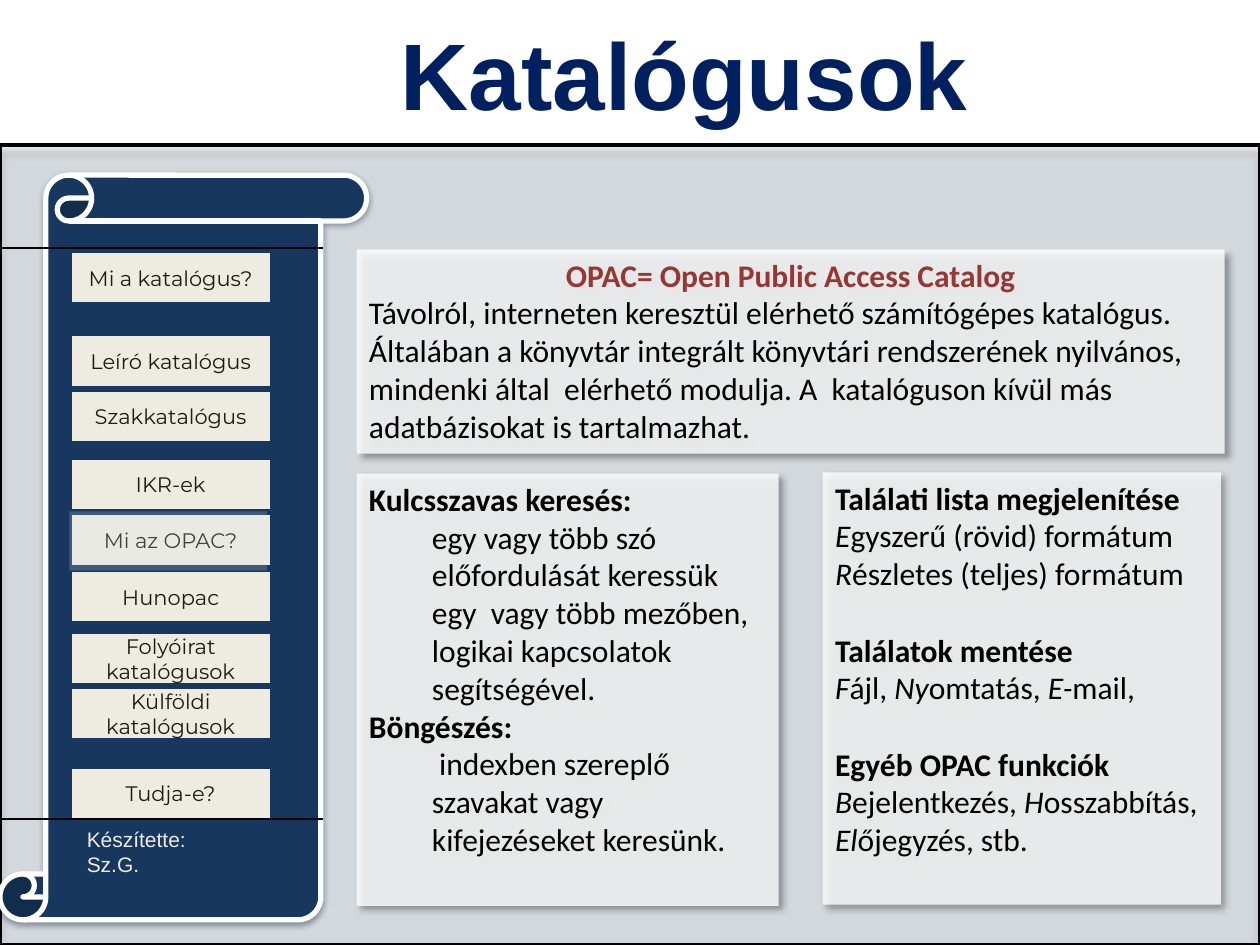
from dataclasses import dataclass

import pptx
import pptx.dml.color
import pptx.enum.shapes
import pptx.enum.text
import pptx.oxml.ns
import pptx.util
from lxml import etree

Inches = pptx.util.Inches
Pt = pptx.util.Pt
Shapes = pptx.enum.shapes.MSO_SHAPE
Align = pptx.enum.text.PP_ALIGN
Anchor = pptx.enum.text.MSO_ANCHOR
qn = pptx.oxml.ns.qn

COLORS = {
    "black": "000000",
    "white": "FFFFFF",
    "mist": "DCE6F2",
    "title": "002060",
    "scroll": "17375E",
    "scroll_shadow": "0F243E",
    "cream": "EEECE1",
    "button_text": "1E1C11",
    "heading": "953735",
}


@dataclass(frozen=True)
class Box:
    left: float
    top: float
    width: float
    height: float

    def lengths(self) -> tuple:
        return tuple(Inches(v) for v in (self.left, self.top, self.width, self.height))


@dataclass(frozen=True)
class Shadow:
    color: str
    alpha: int
    blur: float
    distance: float
    angle: int


@dataclass(frozen=True)
class Line:
    runs: tuple
    color: str = "black"
    align: Align = Align.LEFT
    indented: bool = False
    before: float = 0


@dataclass(frozen=True)
class Card:
    box: Box
    lines: tuple


@dataclass(frozen=True)
class Button:
    label: str
    top: float


CARD_SHADOW = Shadow("black", 40, 4, 3, 45)
GAP = 22

BUTTONS = (
    Button("Mi a katalógus?", 2.01),
    Button("Leíró katalógus", 2.67),
    Button("Szakkatalógus", 3.11),
    Button("IKR-ek", 3.65),
    Button("Mi az OPAC?", 4.09),
    Button("Hunopac", 4.54),
    Button("Folyóirat katalógusok", 5.03),
    Button("Külföldi katalógusok", 5.47),
    Button("Tudja-e?", 6.1),
)

CARDS = (
    Card(Box(2.83, 1.98, 6.89, 1.62), (
        Line((("OPAC= Open Public Access Catalog", "b"),), "heading", Align.CENTER),
        Line((("Távolról, interneten keresztül elérhető számítógépes katalógus. "
               "Általában a könyvtár integrált könyvtári rendszerének nyilvános, "
               "mindenki által  elérhető modulja. A  katalóguson kívül más "
               "adatbázisokat is tartalmazhat.", ""),)),
    )),
    Card(Box(2.83, 3.76, 3.35, 3.43), (
        Line((("Kulcsszavas keresés:", "b"),)),
        Line((("egy vagy több szó előfordulását keressük egy  vagy több mezőben, "
               "logikai kapcsolatok segítségével.", ""),), indented=True),
        Line((("Böngészés:", "b"),)),
        Line(((" indexben szereplő szavakat vagy kifejezéseket keresünk.", ""),),
             indented=True),
    )),
    Card(Box(6.53, 3.75, 3.16, 3.43), (
        Line((("Találati lista megjelenítése", "b"),)),
        Line((("E", "i"), ("gyszerű (rövid) formátum", ""))),
        Line((("R", "i"), ("észletes (teljes) formátum", ""))),
        Line((("Találatok mentése", "b"),), before=GAP),
        Line((("F", "i"), ("ájl, ", ""), ("Ny", "i"), ("omtatás, ", ""),
              ("E-", "i"), ("mail,", ""))),
        Line((("Egyéb OPAC funkciók", "b"),), before=GAP),
        Line((("B", "i"), ("ejelentkezés, ", ""), ("H", "i"), ("osszabbítás, ", ""),
              ("El", "i"), ("őjegyzés, stb.", ""))),
    )),
)


def rgb(color: str) -> pptx.dml.color.RGBColor:
    return pptx.dml.color.RGBColor.from_string(COLORS[color])


def add_alpha(color_element, percent: int) -> None:
    etree.SubElement(color_element, qn("a:alpha"), val=str(percent * 1000))


def style_font(font, family: str, size: float, color: str, bold: bool = False) -> None:
    font.name = family
    font.size = Pt(size)
    font.bold = bold
    font.color.rgb = rgb(color)


def add_figure(slide, kind: Shapes, box: Box, fill: str, opacity: int = 100,
               outline: str = "", outline_width: float = 0, shadow: Shadow | None = None):
    figure = slide.shapes.add_shape(kind, *box.lengths())
    figure.fill.solid()
    figure.fill.fore_color.rgb = rgb(fill)
    properties = figure.element.spPr
    if opacity < 100:
        add_alpha(properties.find(f"{qn('a:solidFill')}/{qn('a:srgbClr')}"), opacity)
    if outline:
        figure.line.color.rgb = rgb(outline)
        figure.line.width = Pt(outline_width)
    else:
        figure.line.fill.background()
    figure.shadow.inherit = False
    if shadow:
        outer = etree.SubElement(
            properties.find(qn("a:effectLst")), qn("a:outerShdw"),
            blurRad=str(Pt(shadow.blur)), dist=str(Pt(shadow.distance)),
            dir=str(shadow.angle * 60000), algn="tl", rotWithShape="0")
        add_alpha(etree.SubElement(outer, qn("a:srgbClr"), val=COLORS[shadow.color]),
                  shadow.alpha)
    return figure


def add_caption(slide, box: Box, text: str, size: float, color: str,
                align: Align, bold: bool, wrap: bool) -> None:
    frame = slide.shapes.add_textbox(*box.lengths()).text_frame
    frame.word_wrap = wrap
    frame.text = text
    for paragraph in frame.paragraphs:
        paragraph.alignment = align
        for run in paragraph.runs:
            style_font(run.font, "Arial", size, color, bold)


def add_rule(slide, y: float) -> None:
    rule = slide.shapes.add_connector(
        pptx.enum.shapes.MSO_CONNECTOR.STRAIGHT,
        Inches(2.56), Inches(y), Inches(0), Inches(y))
    rule.line.color.rgb = rgb("black")
    rule.line.width = Pt(1.25)
    etree.SubElement(rule.element.spPr, qn("a:effectLst"))


def add_button(slide, button: Button) -> None:
    figure = add_figure(slide, Shapes.ACTION_BUTTON_CUSTOM,
                        Box(0.57, button.top, 1.57, 0.39), "cream")
    frame = figure.text_frame
    frame.vertical_anchor = Anchor.MIDDLE
    frame.text = button.label
    label = frame.paragraphs[0]
    label.alignment = Align.CENTER
    style_font(label.runs[0].font, "Montserrat", 12, "button_text")


def add_card(slide, card: Card) -> None:
    figure = add_figure(slide, Shapes.RECTANGLE, card.box, "white", 80, shadow=CARD_SHADOW)
    frame = figure.text_frame
    frame.word_wrap = True
    frame.vertical_anchor = Anchor.TOP
    for index, line in enumerate(card.lines):
        paragraph = frame.add_paragraph() if index else frame.paragraphs[0]
        paragraph.alignment = line.align
        if line.before:
            paragraph.space_before = Pt(line.before)
        if line.indented:
            paragraph.level = 1
            indent = paragraph._p.get_or_add_pPr()
            indent.set("marL", str(Inches(0.5)))
            indent.set("indent", "0")
        for text, style in line.runs:
            run = paragraph.add_run()
            run.text = text
            style_font(run.font, "Calibri", 18, line.color, style == "b")
            run.font.italic = style == "i"


def main() -> None:
    deck = pptx.Presentation()
    deck.slide_width, deck.slide_height = Inches(10), Inches(7.5)
    slide = deck.slides.add_slide(deck.slide_layouts[6])
    add_figure(slide, Shapes.RECTANGLE, Box(0, 1.15, 10, 6.35), "mist", 42,
               "black", 2, Shadow("black", 46, 4, 4, 90))
    add_caption(slide, Box(2.03, 0.08, 6.8, 1.01), "Katalógusok", 54, "title",
                Align.CENTER, True, True)
    add_figure(slide, Shapes.VERTICAL_SCROLL, Box(0, 1.39, 2.91, 5.91), "scroll", 100,
               "white", 3, Shadow("scroll_shadow", 38, 3.1, 1.6, 90))
    for y in (1.97, 6.5):
        add_rule(slide, y)
    add_caption(slide, Box(0.59, 6.51, 1.02, 0.5), "Készítette:\nSz.G.", 12, "cream",
                Align.LEFT, False, False)
    for button in BUTTONS:
        add_button(slide, button)
    add_figure(slide, Shapes.RECTANGLE, Box(0.55, 4.06, 1.57, 0.47), "mist", 20)
    for card in CARDS:
        add_card(slide, card)
    deck.save("out.pptx")


if __name__ == "__main__":
    main()
